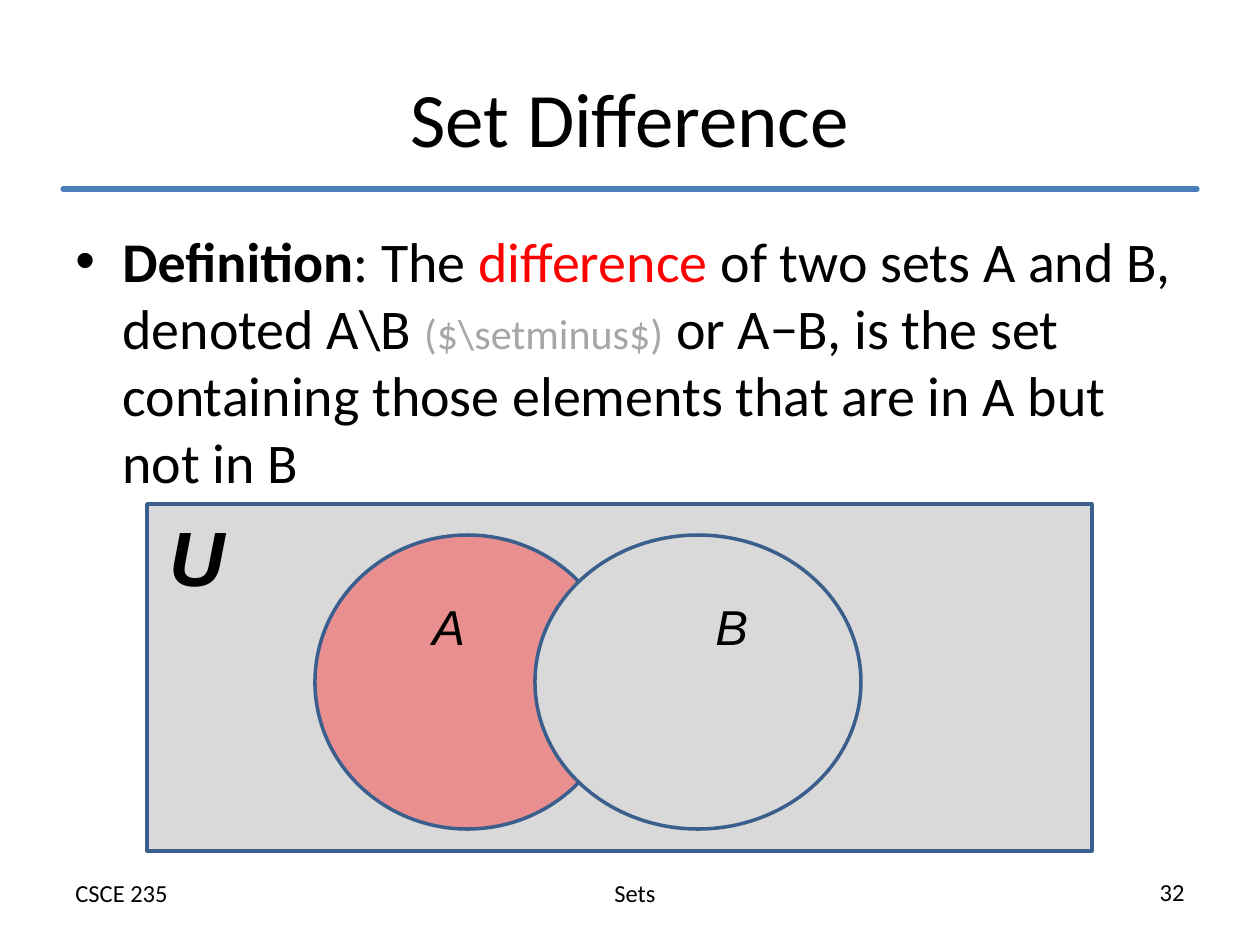
from lxml import etree
from pptx import Presentation
from pptx import util as u
from pptx.dml.color import RGBColor
from pptx.enum import shapes, text
from pptx.oxml import ns

SCALE = 914400 / 126
COLORS = {
    "ink": "000000",
    "rule": "4B7EBC",
    "term": "FF0000",
    "muted": "A6A6A6",
    "universe": "D9D9D9",
    "difference": "E98F8F",
    "outline": "3A5F8C",
}


def px(length):
    return u.Emu(round(length * SCALE))


def rgb(name):
    return RGBColor.from_string(COLORS[name])


def add_run(paragraph, words, size, color="ink", font="Calibri", bold=False, italic=False):
    run = paragraph.add_run()
    run.text = words
    run.font.name = font
    run.font.size = u.Pt(size)
    run.font.color.rgb = rgb(color)
    run.font.bold = bold
    run.font.italic = italic


def add_text(slide, box, align=text.PP_ALIGN.LEFT, anchor=text.MSO_ANCHOR.TOP):
    frame = slide.shapes.add_textbox(*map(px, box)).text_frame
    frame.word_wrap = True
    frame.vertical_anchor = anchor
    paragraph = frame.paragraphs[0]
    paragraph.alignment = align
    return paragraph


def add_bullet(paragraph, indent):
    props = paragraph._p.get_or_add_pPr()
    props.set("marL", str(px(indent)))
    props.set("indent", str(-px(indent)))
    before = etree.SubElement(props, ns.qn("a:spcBef"))
    etree.SubElement(before, ns.qn("a:spcPct"), val="20000")
    etree.SubElement(props, ns.qn("a:buFont"), typeface="Arial")
    etree.SubElement(props, ns.qn("a:buChar"), char="•")


def add_rule(slide, left, right, y):
    rule = slide.shapes.add_connector(
        shapes.MSO_CONNECTOR.STRAIGHT, px(left), px(y), px(right), px(y))
    rule.line.color.rgb = rgb("rule")
    rule.line.width = u.Pt(3)
    rule.line._get_or_add_ln().set("cap", "rnd")
    etree.SubElement(rule._element.spPr, ns.qn("a:effectLst"))


def add_region(slide, kind, box, fill):
    region = slide.shapes.add_shape(kind, *map(px, box))
    region.shadow.inherit = False
    region.fill.solid()
    region.fill.fore_color.rgb = rgb(fill)
    region.line.color.rgb = rgb("outline")
    region.line.width = u.Pt(2)


def add_set_name(slide, name, box, size, bold=False):
    add_run(add_text(slide, box), name, size, font="Arial", bold=bold, italic=True)


def add_footer(slide):
    align = text.PP_ALIGN
    entries = [
        ("CSCE 235", 63, 872, align.LEFT),
        ("Sets", 451, 872, align.CENTER),
        ("32", 829, 871, align.RIGHT),
    ]
    for words, left, top, side in entries:
        add_run(add_text(slide, (left, top, 368, 43), side), words, 14)


def add_definition(slide):
    definition = add_text(slide, (63, 220, 1134, 624))
    add_bullet(definition, 47)
    add_run(definition, "Definition", 32, bold=True)
    add_run(definition, ": The ", 32)
    add_run(definition, "difference ", 32, "term")
    add_run(definition, "of two sets A and B, denoted A\\B ", 32)
    add_run(definition, "($\\setminus$)", 24, "muted")
    add_run(definition, " or A−B, is the set containing those elements "
                        "that are in A but not in B", 32)


def add_venn(slide):
    kinds = shapes.MSO_SHAPE
    add_region(slide, kinds.RECTANGLE, (147, 504, 945, 347), "universe")
    add_set_name(slide, "U", (157, 503, 73, 106), 44, bold=True)
    add_region(slide, kinds.OVAL, (315, 535, 305, 294), "difference")
    add_region(slide, kinds.OVAL, (535, 535, 326, 294), "universe")
    for name, left in (("A", 420), ("B", 703)):
        add_set_name(slide, name, (left, 590, 53, 72), 28)


def main():
    deck = Presentation()
    deck.slide_width, deck.slide_height = px(1260), px(945)
    slide = deck.slides.add_slide(deck.slide_layouts[6])
    add_footer(slide)
    add_rule(slide, 63, 1197, 189)
    title = add_text(slide, (63, 38, 1134, 157), text.PP_ALIGN.CENTER, text.MSO_ANCHOR.MIDDLE)
    add_run(title, "Set Difference", 44)
    add_definition(slide)
    add_venn(slide)
    deck.save("out.pptx")


if __name__ == "__main__":
    main()
